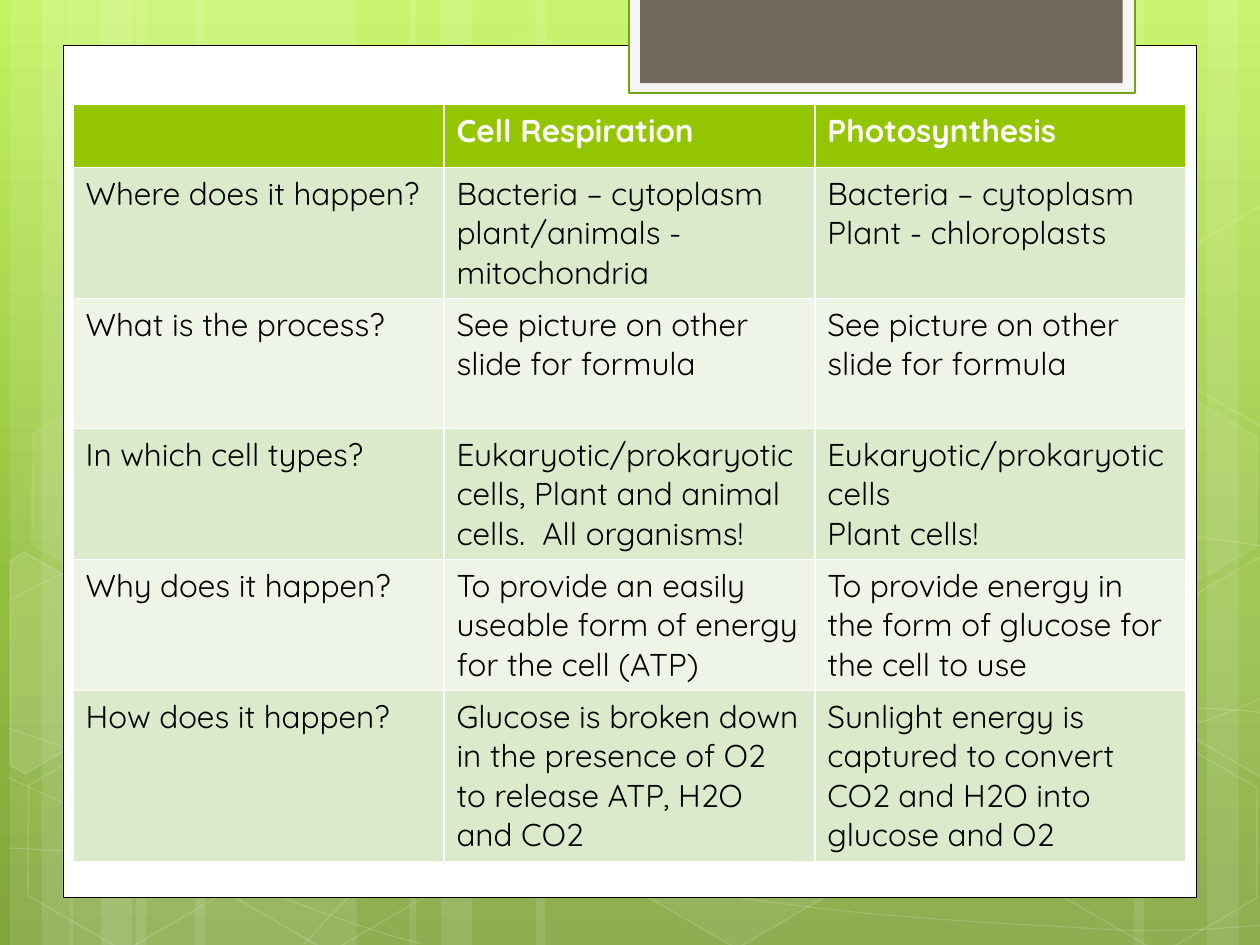
import math
from copy import deepcopy

from lxml import etree
from pptx import Presentation
from pptx import util as u
from pptx.dml.color import RGBColor
from pptx.enum import shapes
from pptx.oxml.ns import qn

WHITE = RGBColor(0xFF, 0xFF, 0xFF)
BLACK = RGBColor(0x00, 0x00, 0x00)
SKY_GREEN = RGBColor(0xC3, 0xF3, 0x5F)
MID_GREEN = RGBColor(0x93, 0xBF, 0x3F)
DEEP_GREEN = RGBColor(0x81, 0xA5, 0x3E)
TAB_EDGE = RGBColor(0x74, 0xA5, 0x10)
TAB_PALE = RGBColor(0xF5, 0xF5, 0xF5)
TAB_BROWN = RGBColor(0x71, 0x68, 0x5A)
HEADER_GREEN = RGBColor(0x94, 0xC6, 0x00)
BAND_DARK = RGBColor(0xDC, 0xEA, 0xCC)
BAND_LIGHT = RGBColor(0xEE, 0xF5, 0xE7)
FONT = "Quicksand"


def paint(shape, fill=None, line=None, width=1, fill_alpha=100, line_alpha=100):
    """Set fill and line, with opacity in percent; None leaves a part empty."""
    shape.shadow.inherit = False
    parts = [(shape.fill, fill, fill_alpha), (shape.line.fill, line, line_alpha)]
    for part, color, alpha in parts:
        if color is None:
            part.background()
            continue
        part.solid()
        part.fore_color.rgb = color
        if alpha < 100:
            holder = shape.element.spPr
            if part is not parts[0][0]:
                holder = holder.find(qn("a:ln"))
            color_element = holder.find(qn("a:solidFill")).find(qn("a:srgbClr"))
            etree.SubElement(color_element, qn("a:alpha"), val=str(alpha * 1000))
    if line is not None:
        shape.line.width = u.Pt(width)


def add_outline(points, close):
    """Draw a freeform through points given in inches."""
    corners = [(u.Inches(x), u.Inches(y)) for x, y in points]
    builder = slide.shapes.build_freeform(*corners[0])
    builder.add_line_segments(corners[1:], close=close)
    return builder.convert_to_shape()


presentation = Presentation()
presentation.slide_width = u.Inches(10)
presentation.slide_height = u.Inches(7.5)
slide = presentation.slides.add_slide(presentation.slide_layouts[6])

# Background gradient, top to bottom
background = slide.background.fill
background.gradient()
background.gradient_angle = 270
stop_list = slide.element.find(".//" + qn("a:gsLst"))
stop_list.append(deepcopy(stop_list[-1]))
gradient = zip(background.gradient_stops, (SKY_GREEN, MID_GREEN, DEEP_GREEN), (0, 0.62, 1))
for stop, color, position in gradient:
    stop.color.rgb = color
    stop.position = position

# Translucent vertical bands: left, width, rotation
bands = [(1.08, 1.75, 0), (0.08, 0.5, 0), (0.33, 0.83, 0), (1.55, 1.75, 0), (0.55, 0.5, 0),
         (0.8, 0.83, 0), (7.33, 1.75, 180), (9.58, 0.5, 180), (9, 0.83, 180),
         (4.25, 3.08, 0), (3.25, 0.5, 0), (3.5, 0.83, 0)]
for left, width, rotation in bands:
    band = slide.shapes.add_shape(shapes.MSO_SHAPE.RECTANGLE, u.Inches(left), 0,
                                  u.Inches(width), u.Inches(7.5))
    band.rotation = rotation
    paint(band, WHITE, fill_alpha=10)

# Thin waves: the kinds of pieces (C curve of three points, L line of one), then the points
waves = [
    ("CCCC", [(0.07, 6.73), (0.61, 6.76), (1.15, 6.79), (1.9, 6.78), (2.65, 6.77),
              (3.58, 6.75), (4.58, 6.65), (5.58, 6.55), (7, 6.36), (7.92, 6.17),
              (8.83, 5.98), (9.77, 5.68), (10.07, 5.51)]),
    ("CCCC", [(0.07, 4.77), (0.36, 4.61), (0.65, 4.46), (1.21, 4.31), (1.78, 4.16),
              (2.59, 3.94), (3.47, 3.87), (4.36, 3.8), (5.44, 3.79), (6.54, 3.87),
              (7.64, 3.95), (9.47, 4.26), (10.07, 4.34)]),
    ("C", [(0.06, 6.17), (1.27, 6.72), (2.47, 7.27), (3.34, 7.49)]),
    ("CCCCCC", [(0.07, 5.78), (0.38, 5.89), (0.7, 6), (1.28, 6.16), (1.86, 6.31),
                (2.73, 6.56), (3.57, 6.73), (4.4, 6.9), (5.45, 7.08), (6.28, 7.18),
                (7.11, 7.29), (8, 7.33), (8.53, 7.36), (9.05, 7.4), (9.19, 7.38),
                (9.45, 7.38), (9.71, 7.37), (9.89, 7.35), (10.07, 7.34)]),
    ("CCCCCCCLCC", [(2.42, 7.49), (2.6, 7.29), (2.78, 7.09), (3.02, 6.91), (3.26, 6.73),
                    (3.6, 6.53), (3.88, 6.39), (4.16, 6.25), (4.33, 6.19), (4.7, 6.09),
                    (5.06, 5.99), (5.73, 5.85), (6.08, 5.78), (6.44, 5.71), (6.49, 5.71),
                    (6.8, 5.69), (7.11, 5.66), (7.6, 5.63), (7.94, 5.62), (8.29, 5.61),
                    (8.86, 5.62), (8.86, 5.62), (9.53, 5.62), (9.71, 5.63), (9.88, 5.64),
                    (9.97, 5.65), (10.06, 5.66), (10.03, 5.65), (10.06, 5.66)]),
]
for kinds, points in waves:
    wave = add_outline(points, close=False)
    # Merge each three line steps of a curve into one Bezier piece
    outline = wave.element.find(".//" + qn("a:path"))
    steps = iter(outline.findall(qn("a:lnTo")))
    for kind in kinds:
        first = next(steps)
        if kind == "C":
            curve = etree.Element(qn("a:cubicBezTo"))
            first.addprevious(curve)
            for step in (first, next(steps), next(steps)):
                curve.append(step[0])
                outline.remove(step)
    paint(wave, line=WHITE, width=0.5, line_alpha=20)

# Hexagons: left, top, fill opacity, line opacity
hexagons = [(3.34, 0.36, 4, 8), (4.97, 5.89, 6, 12), (0.11, 5.91, 0, 12),
            (0.14, 3.12, 7, 8), (1.74, 5.92, 0, 12), (7.53, 4.53, 10, 12),
            (8.34, 5.93, 0, 12), (8.34, 3.14, 7, 8)]
for left, top, fill_alpha, line_alpha in hexagons:
    hexagon = slide.shapes.add_shape(shapes.MSO_SHAPE.HEXAGON, u.Inches(left), u.Inches(top),
                                     u.Inches(1.75), u.Inches(1.52))
    hexagon.adjustments[0] = 0.285
    hexagon.adjustments[1] = 1.155
    hexagon.rotation = 30
    paint(hexagon, WHITE if fill_alpha else None, WHITE, 1, fill_alpha, line_alpha)

# Hexagons cut off by the slide edges: centre, corners as seen, fill opacity
cut_hexagons = [
    ((0.36, 5.35), [(0.08, 4.45), (0.19, 4.38), (0.96, 4.82), (0.95, 5.7), (0.2, 6.14),
                    (0.08, 6.07)], 10),
    ((9.85, 5.2), [(9.26, 4.85), (10.01, 4.41), (10.09, 4.46), (10.09, 6.13),
                   (10.02, 6.17), (9.26, 5.73)], 4),
    ((9.85, 2.41), [(9.26, 2.07), (10.01, 1.63), (10.1, 1.68), (10.09, 3.35),
                    (10.02, 3.39), (9.26, 2.95)], 0),
]
cosine, sine = math.cos(math.radians(30)), math.sin(math.radians(30))
for (center_x, center_y), corners, fill_alpha in cut_hexagons:
    # Turn the corners back, so that the shape's own rotation brings them into place
    upright = [(center_x + (x - center_x) * cosine + (y - center_y) * sine,
                center_y - (x - center_x) * sine + (y - center_y) * cosine)
               for x, y in corners]
    cut_hexagon = add_outline(upright, close=True)
    cut_hexagon.rotation = 30
    paint(cut_hexagon, WHITE if fill_alpha else None, WHITE, 1, fill_alpha, 12)

# White page and the tab at the top
panels = [(0.5, 0.36, 9, 6.76, WHITE, BLACK, 0.5),
          (4.99, -0.02, 4.02, 0.76, TAB_PALE, TAB_EDGE, 1.25),
          (5.08, -0.02, 3.83, 0.68, TAB_BROWN, None, 0)]
for left, top, width, height, fill, line, line_width in panels:
    panel = slide.shapes.add_shape(shapes.MSO_SHAPE.RECTANGLE, u.Inches(left), u.Inches(top),
                                   u.Inches(width), u.Inches(height))
    paint(panel, fill, line, line_width)

# Comparison table; its style draws thin white borders and a thick one under the header
rows = [
    ("", "Cell Respiration", "Photosynthesis"),
    ("Where does it happen?", "Bacteria – cytoplasm plant/animals - mitochondria",
     "Bacteria – cytoplasm\nPlant - chloroplasts"),
    ("What is the process?", *["See picture on other slide for formula"] * 2),
    ("In which cell types?",
     "Eukaryotic/prokaryotic cells, Plant and animal cells.  All organisms!",
     "Eukaryotic/prokaryotic cells\nPlant cells!"),
    ("Why does it happen?", "To provide an easily useable form of energy for the cell (ATP)",
     "To provide energy in the form of glucose for the cell to use"),
    ("How does it happen?",
     "Glucose is broken down in the presence of O2 to release ATP, H2O and CO2",
     "Sunlight energy is captured to convert CO2 and H2O into glucose and O2"),
]
table = slide.shapes.add_table(len(rows), 3, u.Inches(0.58), u.Inches(0.83),
                               u.Inches(8.83), u.Inches(5.65)).table
for row_index, row in enumerate(rows):
    is_header = row_index == 0
    table.rows[row_index].height = u.Inches(0.5 if is_header else 1.03)
    for column_index, content in enumerate(row):
        cell = table.cell(row_index, column_index)
        cell.text_frame.text = content
        for paragraph in cell.text_frame.paragraphs:
            paragraph.font.size = u.Pt(18)
            for run in paragraph.runs:
                run.font.name = FONT
                run.font.size = u.Pt(18)
                run.font.bold = is_header
                run.font.color.rgb = WHITE if is_header else BLACK
        cell.fill.solid()
        cell.fill.fore_color.rgb = (HEADER_GREEN if is_header
                                    else BAND_DARK if row_index % 2 else BAND_LIGHT)

presentation.save("out.pptx")
